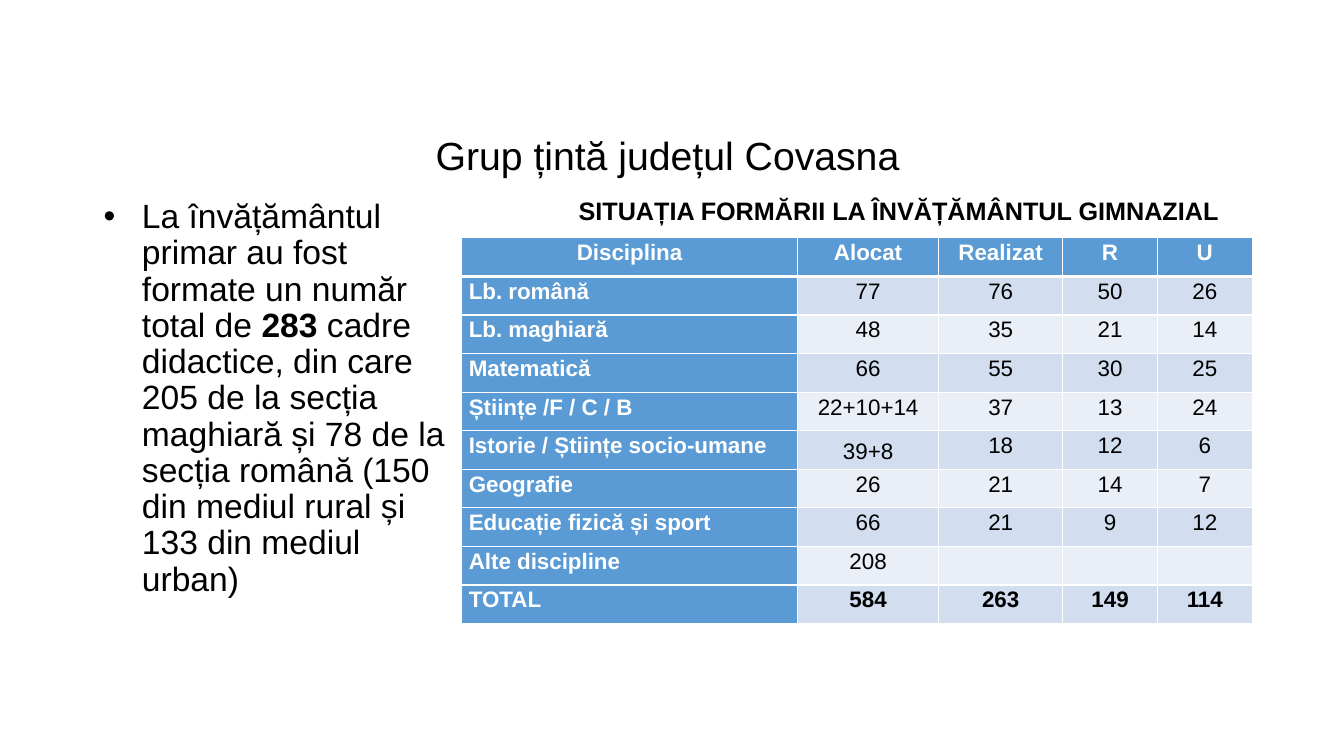
from lxml.etree import SubElement
from pptx import Presentation
from pptx.dml.color import RGBColor
from pptx.enum.text import MSO_ANCHOR, MSO_AUTO_SIZE, PP_ALIGN
from pptx.oxml.ns import qn
from pptx.util import Inches, Pt

# Content
TITLE = "Grup țintă județul Covasna"
PRIMARY = [
    ("La învățământul primar au fost formate un număr total de ", False),
    ("283", True),
    (" cadre didactice, din care 205 de la secția maghiară și 78 de la secția "
     "română (150 din mediul rural și 133 din mediul urban)", False),
]
TABLE_HEADING = "SITUAȚIA FORMĂRII LA ÎNVĂȚĂMÂNTUL GIMNAZIAL"
TRAINING = [
    ("Disciplina", "Alocat", "Realizat", "R", "U"),
    ("Lb. română", "77", "76", "50", "26"),
    ("Lb. maghiară", "48", "35", "21", "14"),
    ("Matematică", "66", "55", "30", "25"),
    ("Științe /F / C / B", "22+10+14", "37", "13", "24"),
    ("Istorie / Științe socio-umane", "39+8", "18", "12", "6"),
    ("Geografie", "26", "21", "14", "7"),
    ("Educație fizică și sport", "66", "21", "9", "12"),
    ("Alte discipline", "208", "", "", ""),
    ("TOTAL", "584", "263", "149", "114"),
]
COLUMN_WIDTHS = [3.33, 1.4, 1.23, 0.94, 0.94]
TABLE_HEIGHT = 3.83
COLORS = {"text": "000000", "white": "FFFFFF", "header": "5B9BD5",
          "odd": "D2DEEF", "even": "EAEFF7"}


def write(frame, runs, size, color="text", bold=False, align=PP_ALIGN.LEFT,
          anchor=MSO_ANCHOR.TOP, spacing=0.9, after=0, left=0, indent=0, bullet=None):
    """Fill a text frame with one paragraph, given as a string or (text, bold) runs."""
    frame.word_wrap = True
    frame.vertical_anchor = anchor
    paragraph = frame.paragraphs[0]
    properties = paragraph._p.get_or_add_pPr()
    properties.set("marL", str(Inches(left)))
    properties.set("indent", str(Inches(indent)))
    if bullet:
        SubElement(properties, qn("a:buFont"), typeface="Arial")
        SubElement(properties, qn("a:buChar"), char=bullet)
    paragraph.alignment = align
    paragraph.line_spacing = spacing
    paragraph.space_before = Pt(0)
    paragraph.space_after = Pt(after)
    paragraph.font.size = Pt(size)
    for text, run_bold in [(runs, bold)] if isinstance(runs, str) else runs:
        run = paragraph.add_run()
        run.text = text
        run.font.name = "Arial"
        run.font.size = Pt(size)
        run.font.bold = run_bold
        run.font.color.rgb = RGBColor.from_string(COLORS[color])


def set_borders(cell, **widths):
    for side in ("L", "R", "T", "B"):
        line = SubElement(cell._tc.get_or_add_tcPr(), qn(f"a:ln{side}"),
                          w=str(Pt(widths.get(side, 1))))
        fill = SubElement(line, qn("a:solidFill"))
        SubElement(fill, qn("a:srgbClr"), val=COLORS["white"])


def main():
    deck = Presentation()
    deck.slide_width, deck.slide_height = Inches(13.33), Inches(7.5)
    slide = deck.slides.add_slide(deck.slide_layouts[5])

    # Title
    title = slide.shapes.title
    title.left, title.top = Inches(0.81), Inches(0.84)
    title.width, title.height = Inches(11.5), Inches(1.45)
    title.text_frame.auto_size = MSO_AUTO_SIZE.NONE
    write(title.text_frame, TITLE, 28, align=PP_ALIGN.CENTER,
          anchor=MSO_ANCHOR.MIDDLE, left=0.12)

    # Primary school paragraph and table heading
    primary = slide.shapes.add_textbox(Inches(0.81), Inches(1.93), Inches(3.77), Inches(4.33))
    write(primary.text_frame, PRIMARY, 24, left=0.5, indent=-0.38, bullet="•")
    heading = slide.shapes.add_textbox(Inches(5.16), Inches(1.66), Inches(7.26), Inches(0.63))
    write(heading.text_frame, TABLE_HEADING, 18, bold=True, align=PP_ALIGN.CENTER,
          anchor=MSO_ANCHOR.BOTTOM, left=0.5, indent=-0.25)

    # Training table
    training = slide.shapes.add_table(
        len(TRAINING), len(COLUMN_WIDTHS), Inches(4.58), Inches(2.36),
        Inches(sum(COLUMN_WIDTHS)), Inches(TABLE_HEIGHT)).table
    training.first_col = True
    for column, width in zip(training.columns, COLUMN_WIDTHS):
        column.width = Inches(width)
    for r, values in enumerate(TRAINING):
        training.rows[r].height = Inches(TABLE_HEIGHT / len(TRAINING))
        for c, value in enumerate(values):
            cell = training.cell(r, c)
            is_header = r == 0 or c == 0
            set_borders(cell, B=3 if r == 0 else 1, T=3 if r == 1 else 1)
            cell.fill.solid()
            band = "header" if is_header else "odd" if r % 2 else "even"
            cell.fill.fore_color.rgb = RGBColor.from_string(COLORS[band])
            cell.margin_left = cell.margin_right = Inches(0.07)
            cell.margin_top, cell.margin_bottom = Inches(0.01), 0
            if value:
                write(cell.text_frame, value, 16, color="white" if is_header else "text",
                      bold=is_header or r == len(TRAINING) - 1,
                      align=PP_ALIGN.LEFT if c == 0 and r else PP_ALIGN.CENTER,
                      spacing=1.07, after=8)
            cell.vertical_anchor = MSO_ANCHOR.MIDDLE if value == "39+8" else MSO_ANCHOR.TOP

    deck.save("out.pptx")


if __name__ == "__main__":
    main()
